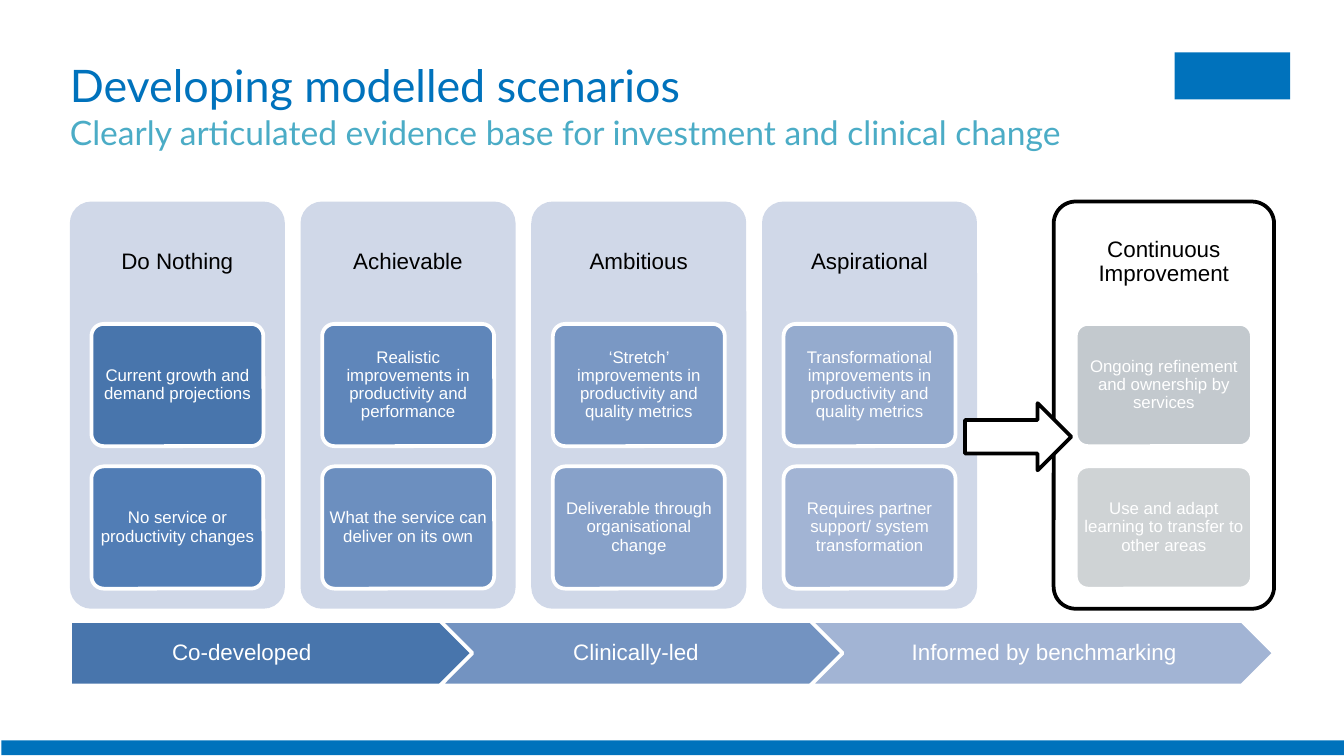
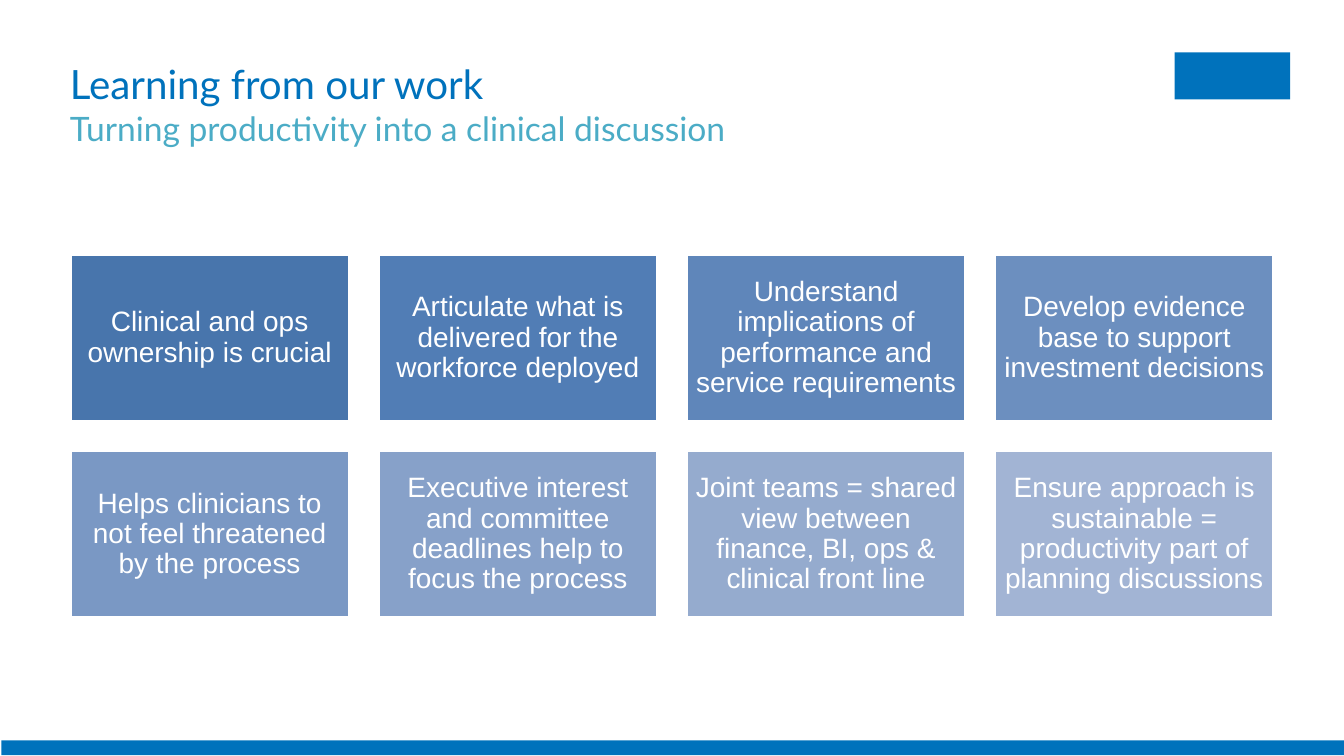
from pptx import Presentation
from pptx.dml.color import RGBColor
from pptx.enum import shapes, text
from pptx.util import Inches, Pt

WHITE = RGBColor(0xFF, 0xFF, 0xFF)
BLACK = RGBColor(0x00, 0x00, 0x00)
BRAND_BLUE = RGBColor(0x00, 0x72, 0xBC)
SUBTITLE_TEAL = RGBColor(0x4B, 0xAC, 0xC6)
COLUMN_FILL = RGBColor(0xD0, 0xD8, 0xE8)
MID_BLUE = RGBColor(0x73, 0x93, 0xC1)
GREYS = [RGBColor(0xC3, 0xC9, 0xCE), RGBColor(0xCF, 0xD3, 0xD5)]
BLUES = [RGBColor.from_string(code) for code in (
    "4875AC", "517DB5", "5F86BA", "6C8FBF",
    "7A98C4", "87A1C9", "95ABCE", "A2B4D4")]

TITLE_FONT, BODY_FONT = "Lato", "Arial"
LEFT, WIDTH = 0.52, 8.96
PRESET = shapes.MSO_SHAPE
CENTER, START = text.PP_ALIGN.CENTER, text.PP_ALIGN.LEFT

SCENARIOS = [
    ("Do Nothing", ["Current growth and demand projections",
                    "No service or productivity changes"]),
    ("Achievable", ["Realistic improvements in productivity and performance",
                    "What the service can deliver on its own"]),
    ("Ambitious", ["‘Stretch’ improvements in productivity and quality metrics",
                   "Deliverable through organisational change"]),
    ("Aspirational", ["Transformational improvements in productivity and quality metrics",
                      "Requires partner support/ system transformation"]),
]
IMPROVEMENT = ("Continuous Improvement",
               ["Ongoing refinement and ownership by services",
                "Use and adapt learning to transfer to other areas"])
# label, preset, fill, left margin, alignment
PRINCIPLES = [
    ("Co-developed", PRESET.PENTAGON, BLUES[0], 0.76, START),
    ("Clinically-led", PRESET.CHEVRON, MID_BLUE, 0.75, START),
    ("Informed by benchmarking", PRESET.CHEVRON, BLUES[-1], 0.05, CENTER),
]
LESSONS = [
    "Clinical and ops ownership is crucial",
    "Articulate what is delivered for the workforce deployed",
    "Understand implications of performance and service requirements",
    "Develop evidence base to support investment decisions",
    "Helps clinicians to not feel threatened by the process",
    "Executive interest and committee deadlines help to focus the process",
    "Joint teams = shared view between finance, BI, ops & clinical front line",
    "Ensure approach is sustainable = productivity part of planning discussions",
]


def set_values(target, values):
    for name, value in values.items():
        setattr(target, name, value)


def set_margins(frame, margins):
    """Set left, top, right and bottom insets, given in inches."""
    sides = ("left", "top", "right", "bottom")
    set_values(frame, {f"margin_{side}": Inches(size) for side, size in zip(sides, margins)})


def add_block(page, preset, box, fill, line=None):
    block = page.shapes.add_shape(preset, *map(Inches, box))
    block.shadow.inherit = False
    block.fill.solid()
    block.fill.fore_color.rgb = fill
    if line is None:
        block.line.fill.background()
    else:
        block.line.color.rgb = line
        block.line.width = Pt(2)
    return block


def add_rounded(page, box, fill, line=None):
    block = add_block(page, PRESET.ROUNDED_RECTANGLE, box, fill, line)
    block.adjustments[0] = 0.1
    return block


def write(block, words, size, margins, color=WHITE, align=CENTER):
    frame = block.text_frame
    set_values(frame, {"word_wrap": True, "vertical_anchor": text.MSO_ANCHOR.MIDDLE})
    set_margins(frame, margins)
    para = frame.paragraphs[0]
    set_values(para, {"alignment": align, "line_spacing": 0.9})
    span = para.add_run()
    span.text = words
    set_values(span.font, {"name": BODY_FONT, "size": Pt(size)})
    span.font.color.rgb = color


def start_page(deck, title, subtitle, title_size, title_top):
    """Add a blank page with the logo block, bottom band and two-line title."""
    page = deck.slides.add_slide(deck.slide_layouts[6])
    add_block(page, PRESET.RECTANGLE, (8.74, 0.39, 0.86, 0.35), BRAND_BLUE)
    add_block(page, PRESET.RECTANGLE, (0.01, 5.51, 9.99, 0.11), BRAND_BLUE)
    box = page.shapes.add_textbox(*map(Inches, (LEFT, title_top, WIDTH, 0.71)))
    box.text_frame.word_wrap = True
    set_margins(box.text_frame, (0, 0, 0, 0))
    para = box.text_frame.paragraphs[0]
    for words, size, color in ((title, title_size, BRAND_BLUE), (subtitle, 18, SUBTITLE_TEAL)):
        if para.runs:
            para.add_line_break()
        span = para.add_run()
        span.text = words
        set_values(span.font, {"name": TITLE_FONT, "size": Pt(size)})
        span.font.color.rgb = color
    return page


def add_column(page, box, scenario, fill, tile_fills, line=None, side_margin=0.03):
    """Draw a headed panel with two tiles, each 80% of its width."""
    left, top, width, height = box
    heading, details = scenario
    tile_height, tile_pitch = 0.91, 1.06
    panel = add_rounded(page, box, fill, line)
    write(panel, heading, 12, (0.05, 0.05, 0.05, height - tile_height + 0.05), BLACK)
    for row, (detail, tile_fill) in enumerate(zip(details, tile_fills)):
        tile_box = (left + 0.1 * width, top + tile_height + row * tile_pitch,
                    0.8 * width, tile_height)
        tile = add_rounded(page, tile_box, tile_fill, WHITE)
        write(tile, detail, 9, (side_margin, 0.02, side_margin, 0.02))


def add_scenarios(page, box):
    left, top, width, height = box
    column_width = 1.6
    pitch = (width - column_width) / (len(SCENARIOS) - 1)
    for index, scenario in enumerate(SCENARIOS):
        column_box = (left + index * pitch, top, column_width, height)
        add_column(page, column_box, scenario, COLUMN_FILL, BLUES[2 * index:2 * index + 2])


def add_principles(page, box):
    left, top, width, height = box
    arrow_width = 3.45
    pitch = (width - arrow_width) / (len(PRINCIPLES) - 1)
    for index, (label, preset, fill, margin, align) in enumerate(PRINCIPLES):
        arrow_box = (left + index * pitch, top, arrow_width, height)
        arrow = add_block(page, preset, arrow_box, fill, WHITE)
        write(arrow, label, 12, (margin, 0.04, 0.02, 0.04), align=align)


def add_lessons(page, box):
    left, top, width, height = box
    columns, tile_width, tile_height = 4, 2.08, 1.25
    across = (width - tile_width) / (columns - 1)
    down = height - tile_height
    for index, (lesson, fill) in enumerate(zip(LESSONS, BLUES)):
        row, column = divmod(index, columns)
        tile_box = (left + column * across, top + row * down, tile_width, tile_height)
        tile = add_block(page, PRESET.RECTANGLE, tile_box, fill, WHITE)
        write(tile, lesson, 15, (0.06,) * 4)


def build_scenarios_page(deck):
    page = start_page(deck, "Developing modelled scenarios",
                      "Clearly articulated evidence base for investment and clinical change",
                      24, 0.43)
    add_scenarios(page, (LEFT, 1.5, 6.75, 3.03))
    add_column(page, (7.84, 1.5, 1.64, 3.03), IMPROVEMENT, WHITE, GREYS, BLACK, 0.02)
    add_block(page, PRESET.RIGHT_ARROW, (7.18, 3, 0.79, 0.5), WHITE, BLACK)
    add_principles(page, (LEFT, 4.62, WIDTH, 0.48))


def build_lessons_page(deck):
    page = start_page(deck, "Learning from our work",
                      "Turning productivity into a clinical discussion", 21.6, 0.44)
    add_lessons(page, (LEFT, 1.89, WIDTH, 2.71))


def main():
    deck = Presentation()
    deck.slide_width = Inches(10)
    deck.slide_height = deck.slide_width * 9 // 16
    build_scenarios_page(deck)
    build_lessons_page(deck)
    deck.save("out.pptx")


if __name__ == "__main__":
    main()
